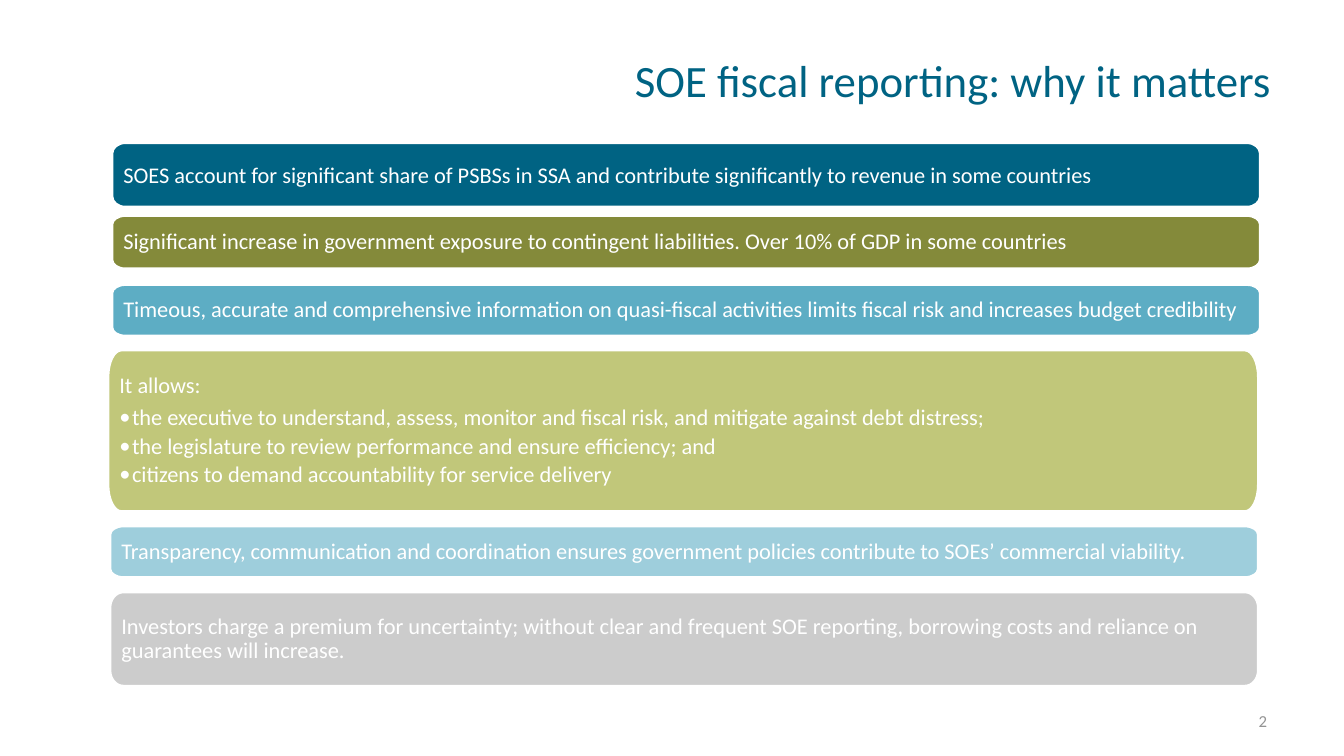
from lxml.etree import SubElement
from pptx import Presentation
from pptx.dml.color import RGBColor
from pptx.enum.text import MSO_ANCHOR as Anchor, PP_ALIGN as Align
from pptx.oxml.ns import qn
from pptx.util import Inches, Pt

WIDTH, HEIGHT = Inches(13.33), Inches(7.5)
FONT = "Calibri"
COLOURS = {
    "white": "FFFFFF", "teal": "006383", "olive": "848A3A", "blue": "5DADC4",
    "lime": "C1C77A", "sky": "9ECEDC", "grey": "CCCCCC", "number": "949494",
}
BARS = [
    ("teal", 8.33, 18.87, 85.45, 8.53, 1.0, [
        "SOES account for significant share of PSBSs in SSA and contribute significantly to revenue in some countries"]),
    ("olive", 8.33, 28.5, 85.45, 7.07, 0.9, [
        "Significant increase in government exposure to contingent liabilities. Over 10% of GDP in some countries"]),
    ("blue", 8.33, 37.63, 85.45, 6.83, 0.9, [
        "Timeous, accurate and comprehensive information on quasi-fiscal activities limits fiscal risk and increases budget credibility"]),
    ("lime", 8.03, 46.3, 85.6, 21.37, 0.9, [
        "It allows:",
        "the executive to understand, assess, monitor and fiscal risk, and mitigate against debt distress;",
        "the legislature to review performance and ensure efficiency; and",
        "citizens to demand accountability for service delivery"]),
    ("sky", 8.18, 69.57, 85.45, 6.83, 0.9, [
        "Transparency, communication and coordination ensures government policies contribute to SOEs’ commercial viability."]),
    ("grey", 8.18, 78.3, 85.45, 12.47, 0.9, [
        "Investors charge a premium for uncertainty; without clear and frequent SOE reporting, borrowing costs and reliance on guarantees will increase."]),
]


def across(share):
    """Turn a percentage of the slide width into a length."""
    return round(WIDTH * share / 100)


def down(share):
    """Turn a percentage of the slide height into a length."""
    return round(HEIGHT * share / 100)


def colour(name):
    """Look up a named colour."""
    return RGBColor.from_string(COLOURS[name])


def style(paragraph, size, colour_name, align=Align.LEFT):
    """Set the font and alignment of a paragraph."""
    paragraph.alignment = align
    paragraph.font.name = FONT
    paragraph.font.size = Pt(size)
    paragraph.font.color.rgb = colour(colour_name)


def add_bullet(paragraph):
    """Give a paragraph a hanging round bullet."""
    properties = paragraph._p.get_or_add_pPr()
    properties.set("marL", str(Pt(9)))
    properties.set("indent", str(-Pt(9)))
    SubElement(properties, qn("a:buFont")).set("typeface", FONT)
    SubElement(properties, qn("a:buChar")).set("char", "•")


def round_corner(line, start, corner, end):
    """Turn a straight path segment into a curve around a corner."""
    curve = line.makeelement(qn("a:cubicBezTo"))
    controls = [
        tuple(round(a + (b - a) * 0.55) for a, b in zip(point, corner))
        for point in (start, end)
    ]
    for x, y in (*controls, end):
        point = SubElement(curve, qn("a:pt"))
        point.set("x", str(x))
        point.set("y", str(y))
    line.getparent().replace(line, curve)


def add_rounded_outline(slide, left, top, width, height):
    """Draw a freeform rectangle with elliptical corners."""
    radius_x, radius_y = across(1), height // 6
    inner_x, inner_y = width - radius_x, height - radius_y
    points = [
        (0, radius_y), (radius_x, 0), (inner_x, 0), (width, radius_y),
        (width, inner_y), (inner_x, height), (radius_x, height), (0, inner_y),
    ]
    corners = [(0, 0), (width, 0), (width, height), (0, height)]
    builder = slide.shapes.build_freeform(*points[0])
    builder.add_line_segments(points[1:] + points[:1], close=True)
    shape = builder.convert_to_shape(left, top)
    lines = list(shape._element.iter(qn("a:lnTo")))
    for line, start, corner, end in zip(lines[::2], points[::2], corners, points[1::2]):
        round_corner(line, start, corner, end)
    return shape


def add_bar(slide, fill, left, top, width, height, line_spacing, texts):
    """Draw a rounded bar with a lead line and optional bullets."""
    shape = add_rounded_outline(slide, across(left), down(top), across(width), down(height))
    shape.shadow.inherit = False
    shape.fill.solid()
    shape.fill.fore_color.rgb = colour(fill)
    shape.line.color.rgb = colour("white")
    shape.line.width = Pt(2)
    frame = shape.text_frame
    frame.word_wrap = True
    frame.vertical_anchor = Anchor.MIDDLE
    frame.margin_left = frame.margin_right = Pt(8.2)
    frame.margin_top = frame.margin_bottom = Pt(8.2)
    for index, text in enumerate(texts):
        paragraph = frame.paragraphs[0] if index == 0 else frame.add_paragraph()
        paragraph.text = text
        paragraph.line_spacing = line_spacing
        if line_spacing < 1:
            paragraph.space_after = Pt(3.2 if index else 5.6)
        if index:
            paragraph.level = 1
            add_bullet(paragraph)
        style(paragraph, 16, "white")


def set_title(slide, text):
    """Place and format the title."""
    title = slide.shapes.title
    title.left, title.top = across(8.18), down(2.2)
    title.width, title.height = across(87.17), down(16.67)
    title.text_frame.text = text
    title.text_frame.vertical_anchor = Anchor.MIDDLE
    style(title.text_frame.paragraphs[0], 32, "teal", Align.RIGHT)


def add_slide_number(slide, text):
    """Write the slide number at the bottom right."""
    box = slide.shapes.add_textbox(across(71.68), down(92.67), across(23.33), down(5.33))
    frame = box.text_frame
    frame.word_wrap = True
    frame.vertical_anchor = Anchor.MIDDLE
    frame.text = text
    style(frame.paragraphs[0], 12, "number", Align.RIGHT)


def main():
    """Build and save the slide."""
    presentation = Presentation()
    presentation.slide_width, presentation.slide_height = WIDTH, HEIGHT
    slide = presentation.slides.add_slide(presentation.slide_layouts[5])
    set_title(slide, "SOE fiscal reporting: why it matters")
    for bar in BARS:
        add_bar(slide, *bar)
    add_slide_number(slide, "2")
    presentation.save("out.pptx")


if __name__ == "__main__":
    main()
